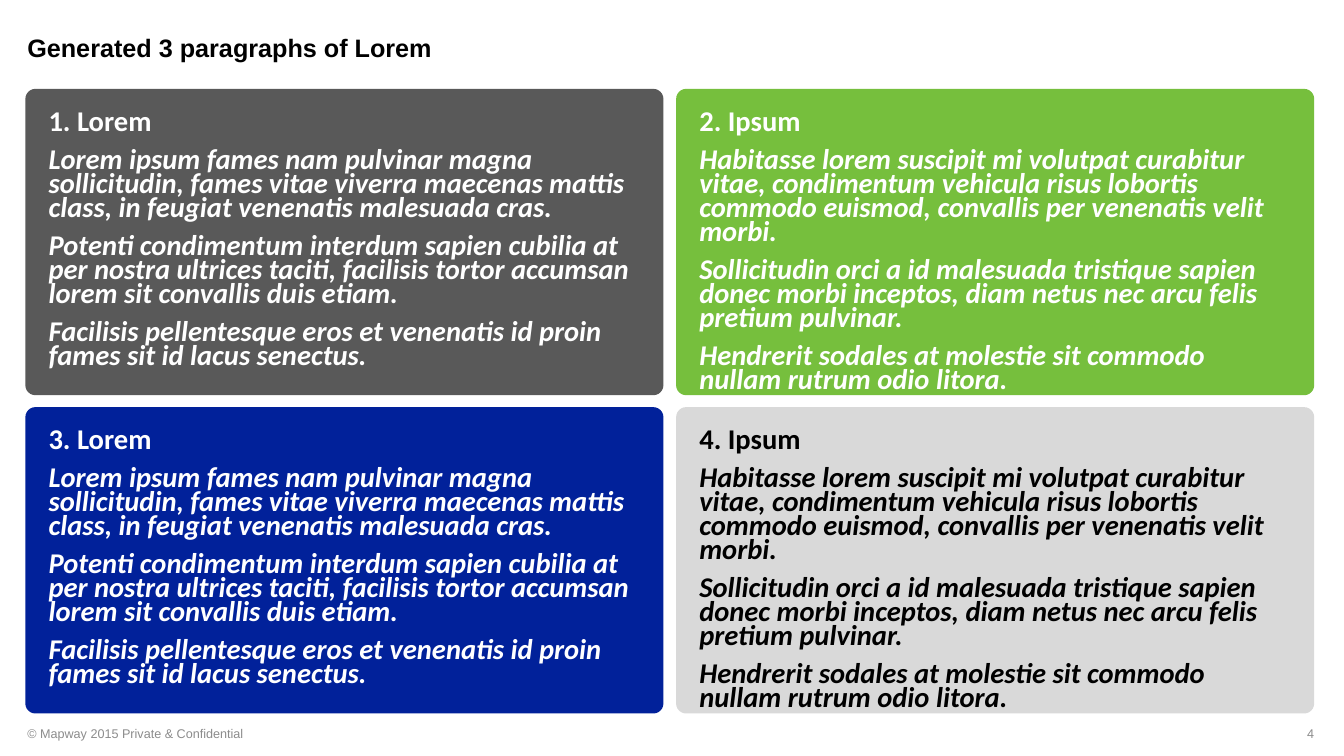
from pptx import Presentation
from pptx import util as u
from pptx.dml.color import RGBColor
from pptx.enum import shapes, text

WHITE = RGBColor(0xFF, 0xFF, 0xFF)
BLACK = RGBColor(0x00, 0x00, 0x00)
CHARCOAL = RGBColor(0x59, 0x59, 0x59)
GREEN = RGBColor(0x76, 0xBF, 0x3D)
NAVY = RGBColor(0x01, 0x21, 0x9A)
SILVER = RGBColor(0xD9, 0xD9, 0xD9)
FOOTER_GREY = RGBColor(0x8C, 0x8C, 0x8C)


def add_run(paragraph, words, font_name, size, color, bold=False, italic=False):
    run = paragraph.add_run()
    run.text = words
    run.font.name = font_name
    run.font.size = u.Pt(size)
    run.font.color.rgb = color
    run.font.bold = bold
    run.font.italic = italic


def set_frame(frame, inset, anchor):
    frame.word_wrap = True
    frame.auto_size = text.MSO_AUTO_SIZE.NONE
    frame.vertical_anchor = anchor
    frame.margin_left = frame.margin_right = u.Cm(inset)
    frame.margin_top = frame.margin_bottom = u.Cm(inset)


deck = Presentation()
deck.slide_width = u.Cm(33.87)
deck.slide_height = u.Cm(19.05)
slide = deck.slides.add_slide(deck.slide_layouts[6])

heading = slide.shapes.add_textbox(u.Cm(0.69), u.Cm(0.91), u.Cm(27.74), u.Cm(0.71)).text_frame
set_frame(heading, 0, text.MSO_ANCHOR.TOP)
heading.paragraphs[0].line_spacing = 0.9
add_run(heading.paragraphs[0], "Generated 3 paragraphs of Lorem", "Arial", 18, BLACK, bold=True)

lorem = [
    "Lorem ipsum fames nam pulvinar magna sollicitudin, fames vitae viverra maecenas mattis class, in feugiat venenatis malesuada cras.",
    "Potenti condimentum interdum sapien cubilia at per nostra ultrices taciti, facilisis tortor accumsan lorem sit convallis duis etiam.",
    "Facilisis pellentesque eros et venenatis id proin fames sit id lacus senectus.",
]
ipsum = [
    "Habitasse lorem suscipit mi volutpat curabitur vitae, condimentum vehicula risus lobortis commodo euismod, convallis per venenatis velit morbi.",
    "Sollicitudin orci a id malesuada tristique sapien donec morbi inceptos, diam netus nec arcu felis pretium pulvinar.",
    "Hendrerit sodales at molestie sit commodo nullam rutrum odio litora.",
]
quadrants = [
    ("1. Lorem", lorem, CHARCOAL, WHITE),
    ("2. Ipsum", ipsum, GREEN, WHITE),
    ("3. Lorem", lorem, NAVY, WHITE),
    ("4. Ipsum", ipsum, SILVER, BLACK),
]

for index, (label, passages, fill_color, text_color) in enumerate(quadrants):
    row, column = divmod(index, 2)
    quadrant = slide.shapes.add_shape(
        shapes.MSO_SHAPE.ROUNDED_RECTANGLE,
        u.Cm(0.64 + 16.4 * column), u.Cm(2.24 + 8.02 * row), u.Cm(16.08), u.Cm(7.72))
    quadrant.adjustments[0] = 0.033
    quadrant.shadow.inherit = False
    quadrant.fill.solid()
    quadrant.fill.fore_color.rgb = fill_color
    quadrant.line.fill.background()

    body = quadrant.text_frame
    set_frame(body, 0.51, text.MSO_ANCHOR.TOP)
    for position, words in enumerate([label] + passages):
        paragraph = body.add_paragraph() if position else body.paragraphs[0]
        paragraph.alignment = text.PP_ALIGN.LEFT
        paragraph.line_spacing = 0.7
        paragraph.space_before = u.Pt(10 if position else 0)
        add_run(paragraph, words, "Calibri", 20.4, text_color, bold=True, italic=position > 0)

footers = [
    ("© Mapway 2015 Private & Confidential", 0.69, 11.43, text.PP_ALIGN.LEFT),
    ("4", 25.6, 7.52, text.PP_ALIGN.RIGHT),
]
for words, left, width, alignment in footers:
    footer = slide.shapes.add_textbox(u.Cm(left), u.Cm(18.26), u.Cm(width), u.Cm(0.46)).text_frame
    set_frame(footer, 0, text.MSO_ANCHOR.MIDDLE)
    footer.paragraphs[0].alignment = alignment
    add_run(footer.paragraphs[0], words, "Arial", 9, FOOTER_GREY)

deck.save("out.pptx")
